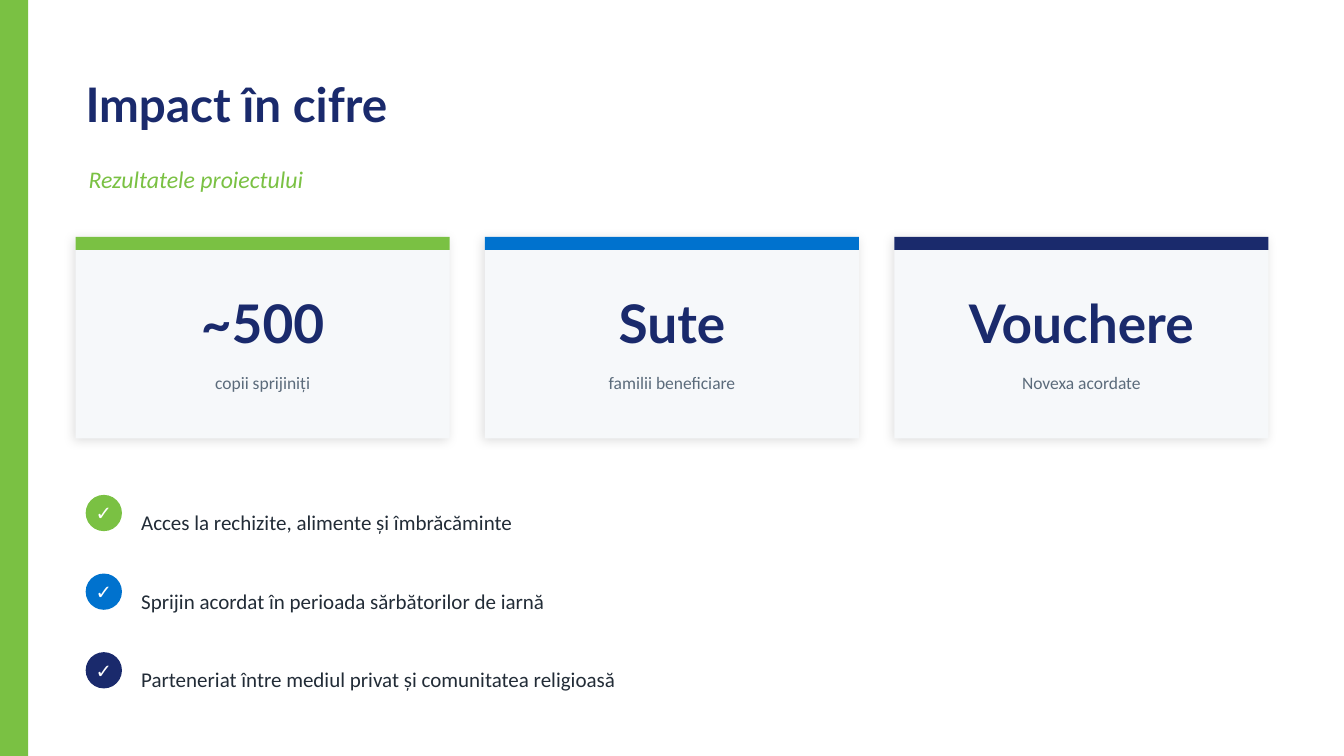
from dataclasses import dataclass

from lxml import etree
from pptx import Presentation
from pptx.dml.color import RGBColor
from pptx.enum.shapes import MSO_SHAPE
from pptx.enum.text import MSO_ANCHOR, PP_ALIGN
from pptx.oxml.ns import qn
from pptx.util import Inches, Pt

RECT, OVAL = MSO_SHAPE.RECTANGLE, MSO_SHAPE.OVAL
LEFT, CENTER = PP_ALIGN.LEFT, PP_ALIGN.CENTER
TOP, MIDDLE = MSO_ANCHOR.TOP, MSO_ANCHOR.MIDDLE


@dataclass(frozen=True)
class Theme:
    green: str = "7AC143"
    blue: str = "0072CE"
    navy: str = "1A2A6C"
    white: str = "FFFFFF"
    card: str = "F6F8FA"
    muted: str = "5B6B7B"
    body: str = "222C37"
    shadow: str = "000000"
    head_font: str = "Lato"
    body_font: str = "Calibri"
    title_size: float = 34
    subtitle_size: float = 17
    figure_size: float = 38
    label_size: float = 12.5
    check_size: float = 14
    item_size: float = 15


class Deck:
    def __init__(self, slide, theme):
        self.s = slide
        self.theme = theme

    def shape(self, kind, x, y, w, h, fill):
        sp = self.s.shapes.add_shape(kind, Inches(x), Inches(y), Inches(w), Inches(h))
        sp.fill.solid()
        sp.fill.fore_color.rgb = RGBColor.from_string(fill)
        sp.line.fill.background()
        sp.shadow.inherit = False
        return sp

    def cast_shadow(self, sp):
        effects = sp._element.spPr.find(qn("a:effectLst"))
        shadow = etree.SubElement(effects, qn("a:outerShdw"), blurRad=str(Pt(8)),
                                  dist=str(Pt(2)), dir=str(135 * 60000),
                                  algn="bl", rotWithShape="0")
        color = etree.SubElement(shadow, qn("a:srgbClr"), val=self.theme.shadow)
        etree.SubElement(color, qn("a:alpha"), val="12000")

    def text(self, text, x, y, w, h, *, size, color, font, bold=False,
             italic=False, align=LEFT, anchor=MIDDLE, inset=True):
        tb = self.s.shapes.add_textbox(Inches(x), Inches(y), Inches(w), Inches(h))
        tf = tb.text_frame
        tf.word_wrap = True
        tf.vertical_anchor = anchor
        if not inset:
            tf.margin_left = tf.margin_right = tf.margin_top = tf.margin_bottom = 0
        p = tf.paragraphs[0]
        p.alignment = align
        r = p.add_run()
        r.text = text
        r.font.name = font
        r.font.size = Pt(size)
        r.font.bold = bold
        r.font.italic = italic
        r.font.color.rgb = RGBColor.from_string(color)

    def card(self, x, y, figure, label, accent):
        t = self.theme
        w = 3.71
        self.cast_shadow(self.shape(RECT, x, y, w, 2, t.card))
        self.shape(RECT, x, y, w, 0.13, accent)
        self.text(figure, x, y + 0.42, w, 0.85, size=t.figure_size, color=t.navy,
                  font=t.head_font, bold=True, align=CENTER, inset=False)
        self.text(label, x + 0.12, y + 1.34, w - 0.24, 0.58, size=t.label_size,
                  color=t.muted, font=t.body_font, align=CENTER, anchor=TOP, inset=False)

    def check_item(self, y, text, accent):
        t = self.theme
        badge = (0.85, y, 0.36, 0.36)
        self.shape(OVAL, *badge, accent)
        self.text("✓", *badge, size=t.check_size, color=t.white,
                  font=t.head_font, bold=True, align=CENTER, inset=False)
        self.text(text, 1.4, y - 0.08, 11.05, 0.7, size=t.item_size,
                  color=t.body, font=t.body_font, inset=False)


def main():
    prs = Presentation()
    prs.slide_width, prs.slide_height = Inches(13.33), Inches(7.5)
    t = Theme()
    deck = Deck(prs.slides.add_slide(prs.slide_layouts[6]), t)

    deck.shape(RECT, 0, 0, 0.28, 7.5, t.green)
    deck.text("Impact în cifre", 0.75, 0.55, 11.9, 0.95, size=t.title_size,
              color=t.navy, font=t.head_font, bold=True)
    deck.text("Rezultatele proiectului", 0.78, 1.5, 11.9, 0.55, size=t.subtitle_size,
              color=t.green, font=t.body_font, italic=True)

    accents = (t.green, t.blue, t.navy)
    cards = (
        ("~500", "copii sprijiniți"),
        ("Sute", "familii beneficiare"),
        ("Vouchere", "Novexa acordate"),
    )
    for i, ((figure, label), accent) in enumerate(zip(cards, accents)):
        deck.card(0.75 + i * 4.06, 2.35, figure, label, accent)

    items = (
        "Acces la rechizite, alimente și îmbrăcăminte",
        "Sprijin acordat în perioada sărbătorilor de iarnă",
        "Parteneriat între mediul privat și comunitatea religioasă",
    )
    for i, (item, accent) in enumerate(zip(items, accents)):
        deck.check_item(4.91 + i * 0.78, item, accent)

    prs.save("out.pptx")


if __name__ == "__main__":
    main()
